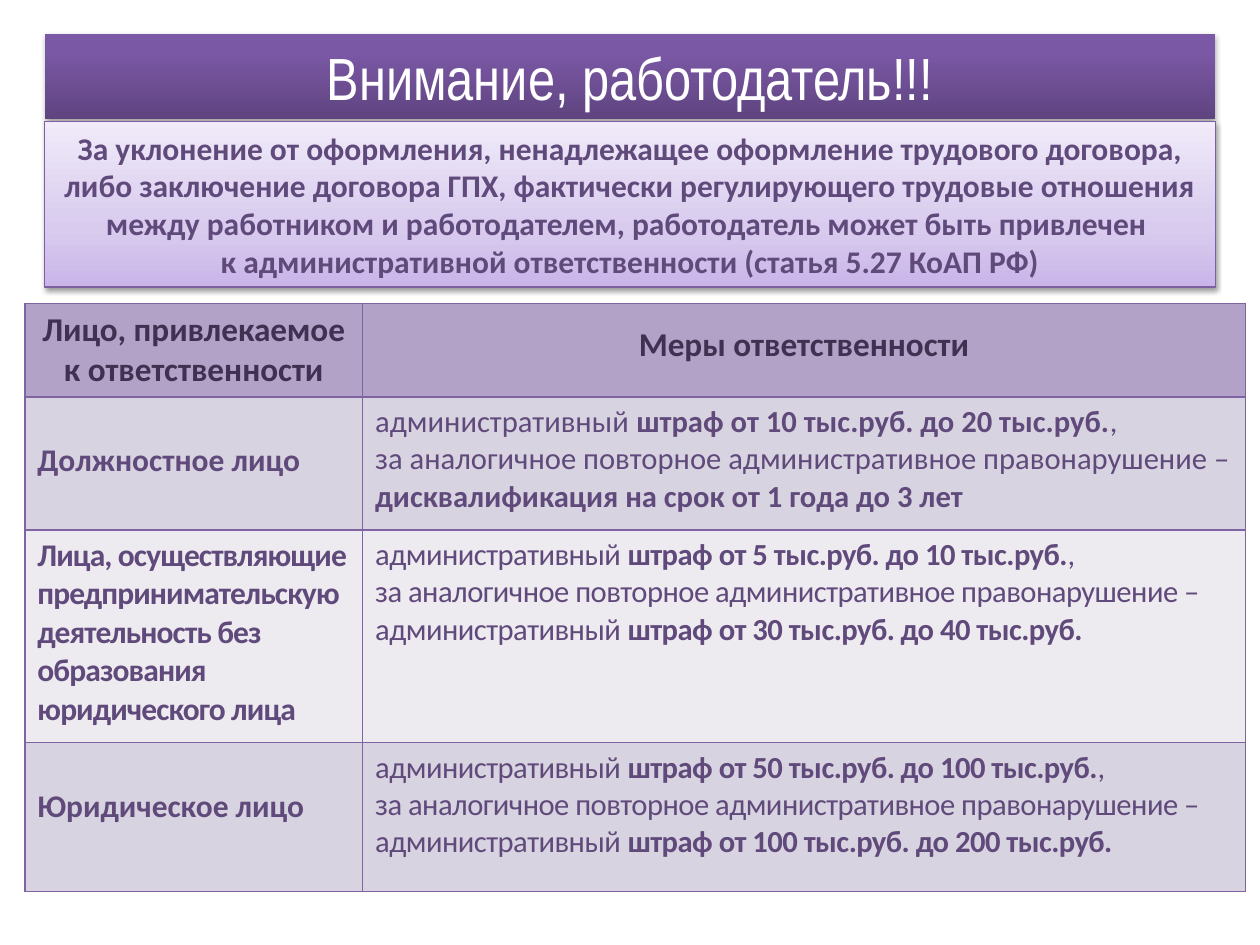
from lxml import etree
from pptx import Presentation
from pptx.dml.color import RGBColor
from pptx.enum.shapes import MSO_SHAPE
from pptx.enum.text import MSO_ANCHOR, PP_ALIGN
from pptx.oxml import parse_xml
from pptx.oxml.ns import nsdecls, qn
from pptx.util import Pt

RECT = MSO_SHAPE.RECTANGLE
MIDDLE = MSO_ANCHOR.MIDDLE
LEFT, CENTER = PP_ALIGN.LEFT, PP_ALIGN.CENTER

PURPLE, DARK = "604A7B", "403152"
HEADER, BAND, LIGHT = "B3A2C7", "D8D3E0", "EDEAF0"


def rgb(value):
    return RGBColor.from_string(value)


class Deck:
    font = "Calibri"
    border = "8064A2"

    def __init__(self, width, height):
        self.prs = Presentation()
        self.prs.slide_width, self.prs.slide_height = Pt(width), Pt(height)
        self.slide = self.prs.slides.add_slide(self.prs.slide_layouts[5])

    def add_text(self, tf, runs, size, color, align, spacing=0, font=None):
        """Fill one paragraph from (text, bold) runs; a newline is a line break."""
        tf.word_wrap = True
        p = tf.paragraphs[0]
        p.alignment = align
        for text, bold in runs:
            for i, line in enumerate(text.split("\n")):
                if i:
                    p.add_line_break()
                r = p.add_run()
                r.text = line
                r.font.name, r.font.size = font or self.font, Pt(size)
                r.font.bold, r.font.color.rgb = bold, rgb(color)
                if spacing:
                    r._r.get_or_add_rPr().set("spc", str(round(spacing * 100)))

    def panel(self, s, stops, line, shadow_alpha):
        """Upward gradient, outline and a soft shadow below."""
        gs = "".join(f'<a:gs pos="{pos * 1000}"><a:srgbClr val="{c}"/></a:gs>'
                     for pos, c in stops)
        sp_pr = s._element.spPr
        sp_pr.append(parse_xml(
            f'<a:gradFill {nsdecls("a")} rotWithShape="1"><a:gsLst>{gs}</a:gsLst>'
            '<a:lin ang="16200000" scaled="0"/></a:gradFill>'))
        if line:
            s.line.color.rgb, s.line.width = rgb(line), Pt(0.75)
        else:
            s.line.fill.background()
        sp_pr.append(parse_xml(
            f'<a:effectLst {nsdecls("a")}><a:outerShdw blurRad="{Pt(3.1)}" '
            f'dist="{Pt(1.7)}" dir="5400000" rotWithShape="0"><a:srgbClr val="000000">'
            f'<a:alpha val="{shadow_alpha * 1000}"/></a:srgbClr></a:outerShdw></a:effectLst>'))

    def title(self, text, x, y, w, h, stops):
        s = self.slide.shapes.title
        s.left, s.top, s.width, s.height = Pt(x), Pt(y), Pt(w), Pt(h)
        self.panel(s, stops, None, 35)
        s.text_frame.vertical_anchor = MIDDLE
        self.add_text(s.text_frame, [(text, False)], 34, "FFFFFF", CENTER, font="Arial Narrow")

    def box(self, text, x, y, w, h, stops):
        s = self.slide.shapes.add_shape(RECT, Pt(x), Pt(y), Pt(w), Pt(h))
        self.panel(s, stops, "7D60A0", 38)
        s.text_frame.vertical_anchor = MIDDLE
        self.add_text(s.text_frame, [(text, True)], 18, PURPLE, CENTER)

    def table(self, x, y, cols, rows):
        frame = self.slide.shapes.add_table(len(rows), len(cols), Pt(x), Pt(y),
                                            Pt(sum(cols)), Pt(sum(h for h, *_ in rows)))
        table = frame.table
        table.first_row = table.horz_banding = False
        for col, w in zip(table.columns, cols):
            col.width = Pt(w)
        for i, (h, fill, cells) in enumerate(rows):
            table.rows[i].height = Pt(h)
            for j, (top, text) in enumerate(cells):
                self.cell(table.cell(i, j), fill, top, text)

    def cell(self, cell, fill, top, text):
        tc_pr = cell._tc.get_or_add_tcPr()
        for side in ("lnL", "lnR", "lnT", "lnB"):
            ln = etree.SubElement(tc_pr, qn(f"a:{side}"), w=str(Pt(1)))
            solid = etree.SubElement(ln, qn("a:solidFill"))
            etree.SubElement(solid, qn("a:srgbClr"), val=self.border)
        cell.fill.solid()
        cell.fill.fore_color.rgb = rgb(fill)
        cell.margin_top = Pt(top)
        self.add_text(cell.text_frame, **text)


def head(text):
    return dict(runs=[(text, True)], size=19, color=DARK, align=CENTER)


def person(text, spacing=0):
    return dict(runs=[(text, True)], size=18, color=PURPLE, align=LEFT, spacing=spacing)


def penalty(first, repeat, spacing=-0.3):
    runs = [("административный ", False), (first, True),
            (", \nза аналогичное повторное административное правонарушение – ", False)]
    return dict(runs=runs + repeat, size=17.5, color=PURPLE, align=LEFT, spacing=spacing)


def fine(text):
    return [("административный ", False), (text, True)]


def main():
    deck = Deck(720, 540)

    # Title bar
    deck.title("Внимание, работодатель!!!", 25.5, 19.5, 669, 48.5,
               [(0, "5F4480"), (80, "7B58A6"), (100, "7C57A8")])

    # Penalties: (row height, fill, cells as (top margin, text))
    top = 3.6
    deck.table(14.2, 173.5, [193, 504.5], [
        (52.5, HEADER, [
            (top, head("Лицо, привлекаемое к ответственности")),
            (12, head("Меры ответственности"))]),
        (76, BAND, [
            (25.6, person("Должностное лицо")),
            (top, penalty("штраф от 10 тыс.руб. до 20 тыс.руб.",
                          [("дисквалификация на срок от 1 года до 3 лет", True)], 0))]),
        (121.5, LIGHT, [
            (top, person("Лица, осуществляющие предпринимательскую деятельность "
                         "без образования юридического лица", -0.5)),
            (top, penalty("штраф от 5 тыс.руб. до 10 тыс.руб.",
                          fine("штраф от 30 тыс.руб. до 40 тыс.руб.")))]),
        (85, BAND, [
            (25.6, person("Юридическое лицо")),
            (top, penalty("штраф от 50 тыс.руб. до 100 тыс.руб.",
                          fine("штраф от 100 тыс.руб. до 200 тыс.руб.")))]),
    ])

    # Legal basis
    deck.box("За уклонение от оформления, ненадлежащее оформление трудового договора, "
             "либо заключение договора ГПХ, фактически регулирующего трудовые отношения "
             "между работником и работодателем, работодатель может быть привлечен \n"
             "к административной ответственности (статья 5.27 КоАП РФ)",
             25.5, 69.5, 669, 94.5, [(0, "C9B5E8"), (35, "D8CBEE"), (100, "F0EAF9")])

    deck.prs.save("out.pptx")


if __name__ == "__main__":
    main()
